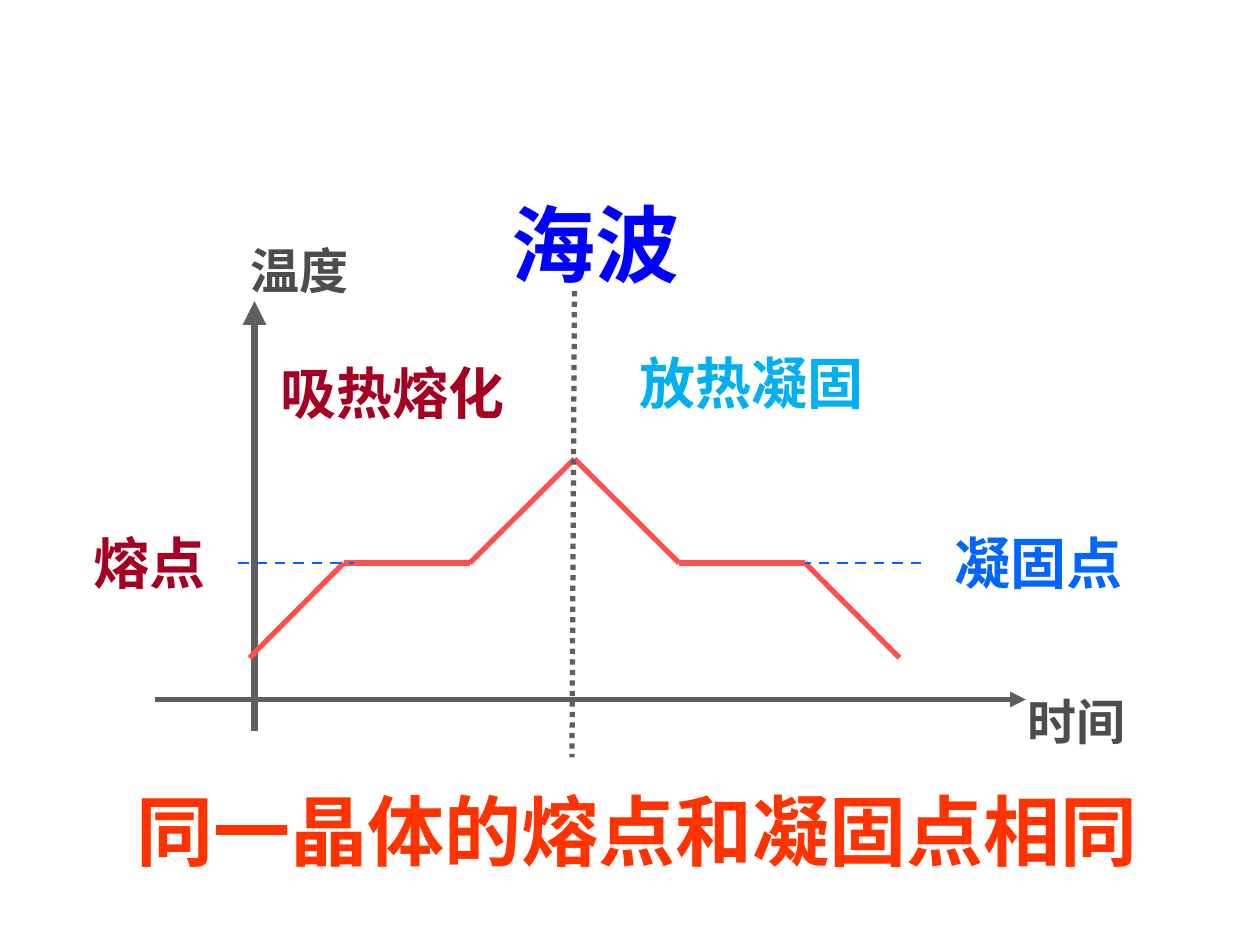
from dataclasses import dataclass
from itertools import pairwise

from pptx import Presentation
from pptx.dml.color import RGBColor
from pptx.enum.dml import MSO_LINE
from pptx.enum.shapes import MSO_CONNECTOR
from pptx.enum.text import MSO_ANCHOR, MSO_AUTO_SIZE, PP_ALIGN
from pptx.oxml.ns import qn
from pptx.util import Cm, Pt
from lxml import etree

STRAIGHT = MSO_CONNECTOR.STRAIGHT
DASH = MSO_LINE.DASH
DOT = MSO_LINE.ROUND_DOT
TOP = MSO_ANCHOR.TOP
LEFT = PP_ALIGN.LEFT
FIXED = MSO_AUTO_SIZE.NONE

HUES = {
    "axis": "5F5F5F", "name": "4D4D4D", "curve": "FF5050",
    "level": "0066FF", "melt": "A50021", "freeze": "00B0F0",
    "rule": "FF3300", "title": "0000FF",
}
MID = 11.58
HOLD = 11.35
LOW = 13.26
PEAK = 9.25


@dataclass
class Line:
    start: tuple[float, float]
    end: tuple[float, float]
    hue: str
    width: float
    dash: int | None = None
    arrow: bool = False


@dataclass
class Label:
    text: str
    left: float
    top: float
    width: float
    height: float
    size: int
    hue: str
    wrap: bool = False


def draw_line(slide, line: Line) -> None:
    ends = [Cm(v) for v in (*line.start, *line.end)]
    shape = slide.shapes.add_connector(STRAIGHT, *ends)
    shape.line.color.rgb = RGBColor.from_string(HUES[line.hue])
    shape.line.width = Pt(line.width)
    if line.dash is not None:
        shape.line.dash_style = line.dash
    props = shape._element.spPr
    if line.arrow:
        etree.SubElement(props.find(qn("a:ln")), qn("a:tailEnd"), type="triangle")
    etree.SubElement(props, qn("a:effectLst"))


def fill_text(shape, label: Label) -> None:
    shape.left, shape.top = Cm(label.left), Cm(label.top)
    shape.width, shape.height = Cm(label.width), Cm(label.height)
    frame = shape.text_frame
    frame.text = label.text
    frame.word_wrap = label.wrap
    frame.auto_size = FIXED
    frame.vertical_anchor = TOP
    para = frame.paragraphs[0]
    para.alignment = LEFT
    para.line_spacing = 1.0
    para.space_before = Pt(0)
    font = para.font
    font.name = "Arial"
    font.size = Pt(label.size)
    font.bold = True
    font.color.rgb = RGBColor.from_string(HUES[label.hue])


def draw_label(slide, label: Label) -> None:
    fill_text(slide.shapes.add_textbox(0, 0, 0, 0), label)


RISE = [(MID - 6.55, LOW), (MID - 4.65, HOLD), (MID - 2.11, HOLD)]
FALL = [(2 * MID - x, y) for x, y in reversed(RISE)]
CURVE = [*RISE, (MID, PEAK), *FALL]

LINES = [
    Line((5.13, 14.73), (5.13, 6.07), "axis", 4.5, arrow=True),
    Line((3.12, 14.1), (20.68, 14.1), "axis", 3, arrow=True),
    *(Line(a, b, "curve", 3) for a, b in pairwise(CURVE)),
    Line((4.8, HOLD), (7.14, HOLD), "level", 1.5, DASH),
    Line((18.57, HOLD), (16.23, HOLD), "level", 1.5, DASH),
    Line((MID, 5.87), (11.53, 15.27), "axis", 3, DOT),
]

LABELS = [
    Label("凝固点", 19.0, 10.52, 3.89, 1.6, 32, "level"),
    Label("时间", 20.47, 13.82, 2.49, 1.45, 28, "name"),
    Label("温度", 4.8, 4.72, 2.49, 1.45, 28, "name"),
    Label("熔点", 1.63, 10.52, 2.77, 1.6, 32, "melt"),
    Label("吸热熔化", 5.41, 7.11, 5.05, 1.6, 32, "melt"),
    Label("放热凝固", 12.65, 6.91, 5.05, 1.6, 32, "freeze"),
    Label("同一晶体的熔点和凝固点相同", 2.51, 15.67, 22.12, 2.13, 44, "rule", True),
]
TITLE = Label("海波", 10.06, 3.76, 4.06, 2.29, 48, "title", True)


def main() -> None:
    deck = Presentation()
    deck.slide_width, deck.slide_height = Cm(25.4), Cm(19.05)
    slide = deck.slides.add_slide(deck.slide_layouts[5])
    for line in LINES:
        draw_line(slide, line)
    for label in LABELS:
        draw_label(slide, label)
    fill_text(slide.shapes.title, TITLE)
    deck.save("out.pptx")


if __name__ == "__main__":
    main()
